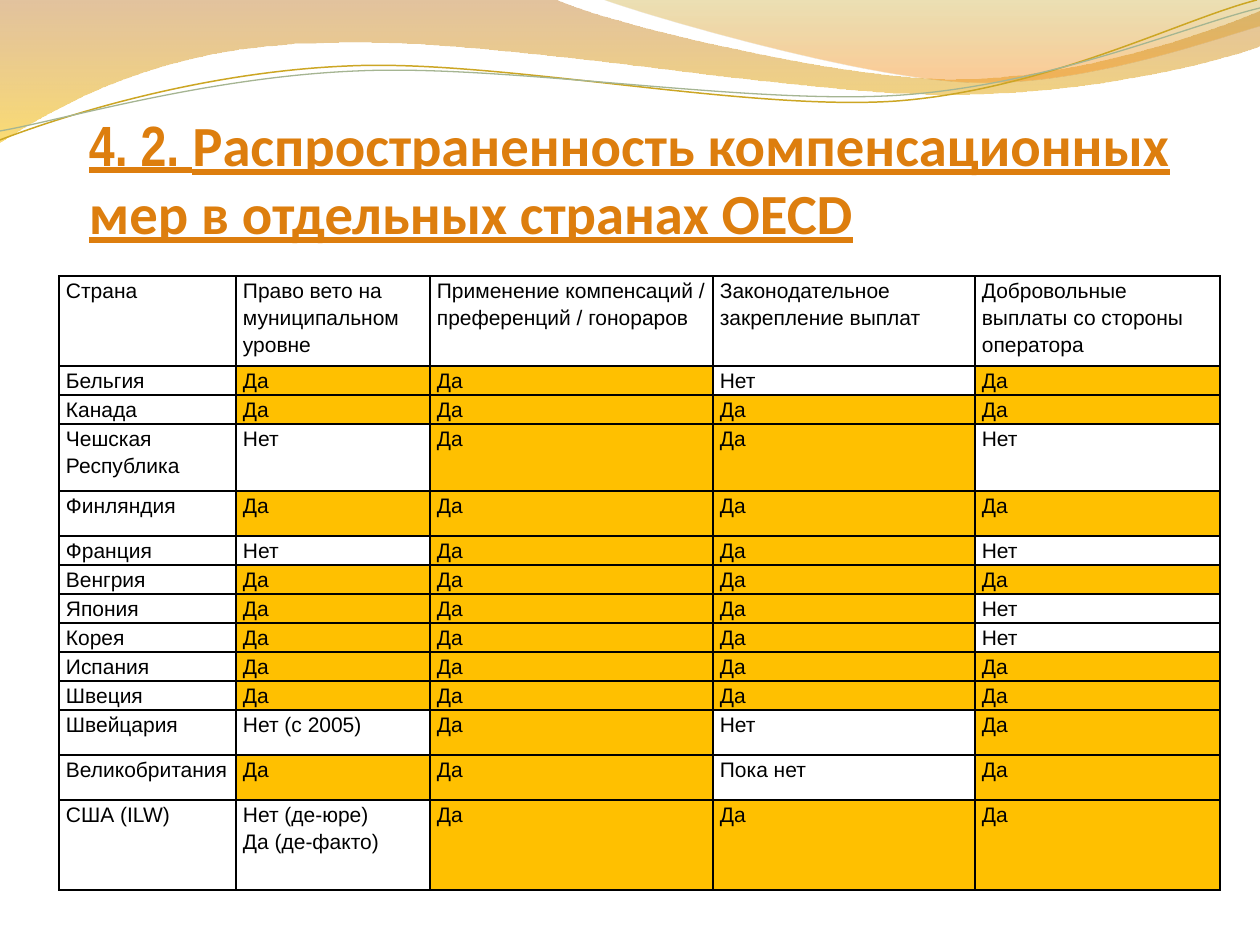
"""Build a slide with a wave header, a title and a table of compensation by country."""
from dataclasses import dataclass

from lxml.etree import SubElement
from pptx import Presentation
from pptx.dml.color import RGBColor as Rgb
from pptx.enum.text import MSO_ANCHOR as Anchor
from pptx.oxml.ns import qn
from pptx.util import Pt

SCALE = 914400 / 126


def px(n):
    return round(n * SCALE)


@dataclass(frozen=True)
class Theme:
    ink: str = "000000"
    head: str = "DD7E0E"
    mark: str = "FFC000"
    gold: str = "CCA624"
    sage: str = "A5B592"
    sand: tuple = ((0, "C07A28", 45), (1, "F7BF00", 55))
    peach: tuple = ((0, "C09709", 30), (0.8, "F59320", 45))
    title: float = 32.4
    body: float = 12
    rule: float = 1
    font: str = "Arial"
    slim: str = "Arial Narrow"
    bold: str = "Calibri"


class Page:
    def __init__(self, slide, theme):
        self.items = slide.shapes
        self.theme = theme

    def curve(self, start, parts, close):
        dots = [part[i:i + 2] for part in parts for i in range(0, len(part), 2)]
        pen = self.items.build_freeform(*start, scale=SCALE)
        pen.add_line_segments(dots, close=close)
        shape = pen.convert_to_shape()
        shape.shadow.inherit = False
        legs = iter(list(shape.element.iter(qn("a:lnTo"))))
        for part in parts:
            group = [next(legs) for _ in range(len(part) // 2)]
            if len(group) == 3:
                route = group[0].getparent()
                bend = SubElement(route, qn("a:cubicBezTo"))
                group[0].addprevious(bend)
                for leg in group:
                    bend.append(leg[0])
                    route.remove(leg)
        return shape

    def wave(self, start, parts, stops):
        shape = self.curve(start, parts, True)
        shape.line.fill.background()
        fill = shape.fill
        fill.gradient()
        fill.gradient_angle = 270
        for stop, (place, color, _) in zip(fill.gradient_stops, stops):
            stop.position = place
            stop.color.rgb = Rgb.from_string(color)
        tints = shape.element.spPr.iter(qn("a:srgbClr"))
        for tint, (_, _, alpha) in zip(tints, stops):
            SubElement(tint, qn("a:alpha"), val=str(alpha * 1000))

    def strand(self, start, parts, color, width):
        shape = self.curve(start, parts, False)
        shape.fill.background()
        shape.line.color.rgb = Rgb.from_string(color)
        shape.line.width = Pt(width)

    def title(self, box, runs):
        frame = self.items.add_textbox(*map(px, box)).text_frame
        frame.word_wrap = True
        frame.vertical_anchor = Anchor.BOTTOM
        frame.margin_left = frame.margin_right = frame.margin_bottom = 0
        para = frame.paragraphs[0]
        font = para.font
        font.size = Pt(self.theme.title)
        font.bold = font.underline = True
        font.color.rgb = Rgb.from_string(self.theme.head)
        for text, face in runs:
            run = para.add_run()
            run.text = text
            run.font.name = face

    def border(self, cell):
        props = cell._tc.get_or_add_tcPr()
        for side in ("lnL", "lnR", "lnT", "lnB"):
            line = SubElement(props, qn(f"a:{side}"), w=str(Pt(self.theme.rule)), cmpd="sng")
            fill = SubElement(line, qn("a:solidFill"))
            SubElement(fill, qn("a:srgbClr"), val=self.theme.ink)
            SubElement(line, qn("a:prstDash"), val="solid")

    def cell(self, cell, text):
        cell.text = text
        cell.margin_left = cell.margin_right = px(7)
        cell.margin_top = cell.margin_bottom = 0
        self.border(cell)
        if text == "Да":
            cell.fill.solid()
            cell.fill.fore_color.rgb = Rgb.from_string(self.theme.mark)
        else:
            cell.fill.background()
        for para in cell.text_frame.paragraphs:
            para.line_spacing = 1.15
            for font in (para.font, para.runs[0].font):
                font.size = Pt(self.theme.body)
                font.name = self.theme.font
                font.color.rgb = Rgb.from_string(self.theme.ink)

    def table(self, left, top, cols, rows, data):
        box = map(px, (left, top, sum(cols), sum(rows)))
        grid = self.items.add_table(len(rows), len(cols), *box).table
        grid.first_row = grid.horz_banding = False
        for col, width in zip(grid.columns, cols):
            col.width = px(width)
        for row, height, texts in zip(grid.rows, rows, data):
            row.height = px(height)
            for cell, text in zip(row.cells, texts):
                self.cell(cell, text)


COLS = (177, 194, 283, 262, 245)
ROWS = (90, 23, 23, 67, 45, 23, 23, 23, 23, 23, 23, 45, 45, 90)
DATA = (
    ("Страна", "Право вето на муниципальном уровне",
     "Применение компенсаций / преференций / гонораров",
     "Законодательное закрепление выплат",
     "Добровольные выплаты со стороны оператора"),
    ("Бельгия", "Да", "Да", "Нет", "Да"),
    ("Канада", "Да", "Да", "Да", "Да"),
    ("Чешская Республика", "Нет", "Да", "Да", "Нет"),
    ("Финляндия", "Да", "Да", "Да", "Да"),
    ("Франция", "Нет", "Да", "Да", "Нет"),
    ("Венгрия", "Да", "Да", "Да", "Да"),
    ("Япония", "Да", "Да", "Да", "Нет"),
    ("Корея", "Да", "Да", "Да", "Нет"),
    ("Испания", "Да", "Да", "Да", "Да"),
    ("Швеция", "Да", "Да", "Да", "Да"),
    ("Швейцария", "Нет (с 2005)", "Да", "Нет", "Да"),
    ("Великобритания", "Да", "Да", "Пока нет", "Да"),
    ("США (ILW)", "Нет (дe-юре)\nДа (де-факто)", "Да", "Да", "Да"),
)


def main():
    deck = Presentation()
    deck.slide_width, deck.slide_height = px(1260), px(945)
    theme = Theme()
    page = Page(deck.slides.add_slide(deck.slide_layouts[6]), theme)
    page.wave((0, 0), (
        (556, 0), (600, 21, 837, 79, 955, 79), (1075, 79, 1207, 33, 1260, 11),
        (1260, 46), (1239, 55, 1096, 96, 940, 94), (784, 94, 481, 35, 324, 43),
        (163, 45, 58, 105, 0, 142)), theme.sand)
    page.wave((604, 0), (
        (641, 14, 859, 78, 969, 82), (1079, 87, 1211, 40, 1260, 26),
        (1260, 0)), theme.peach)
    page.strand((0, 140), (
        (60, 117, 199, 72, 349, 66), (498, 59, 747, 112, 898, 101),
        (1049, 89, 1182, 19, 1257, 0)), theme.gold, 0.85)
    page.strand((0, 131), (
        (59, 121, 207, 77, 357, 71), (508, 64, 752, 106, 903, 95),
        (1053, 84, 1186, 26, 1260, 8)), theme.sage, 0.75)
    page.title((89, 158, 1131, 88), (
        ("4. 2. ", theme.slim),
        ("Распространенность компенсационных мер в отдельных странах OECD", theme.bold)))
    page.table(59, 276, COLS, ROWS, DATA)
    deck.save("out.pptx")


if __name__ == "__main__":
    main()
